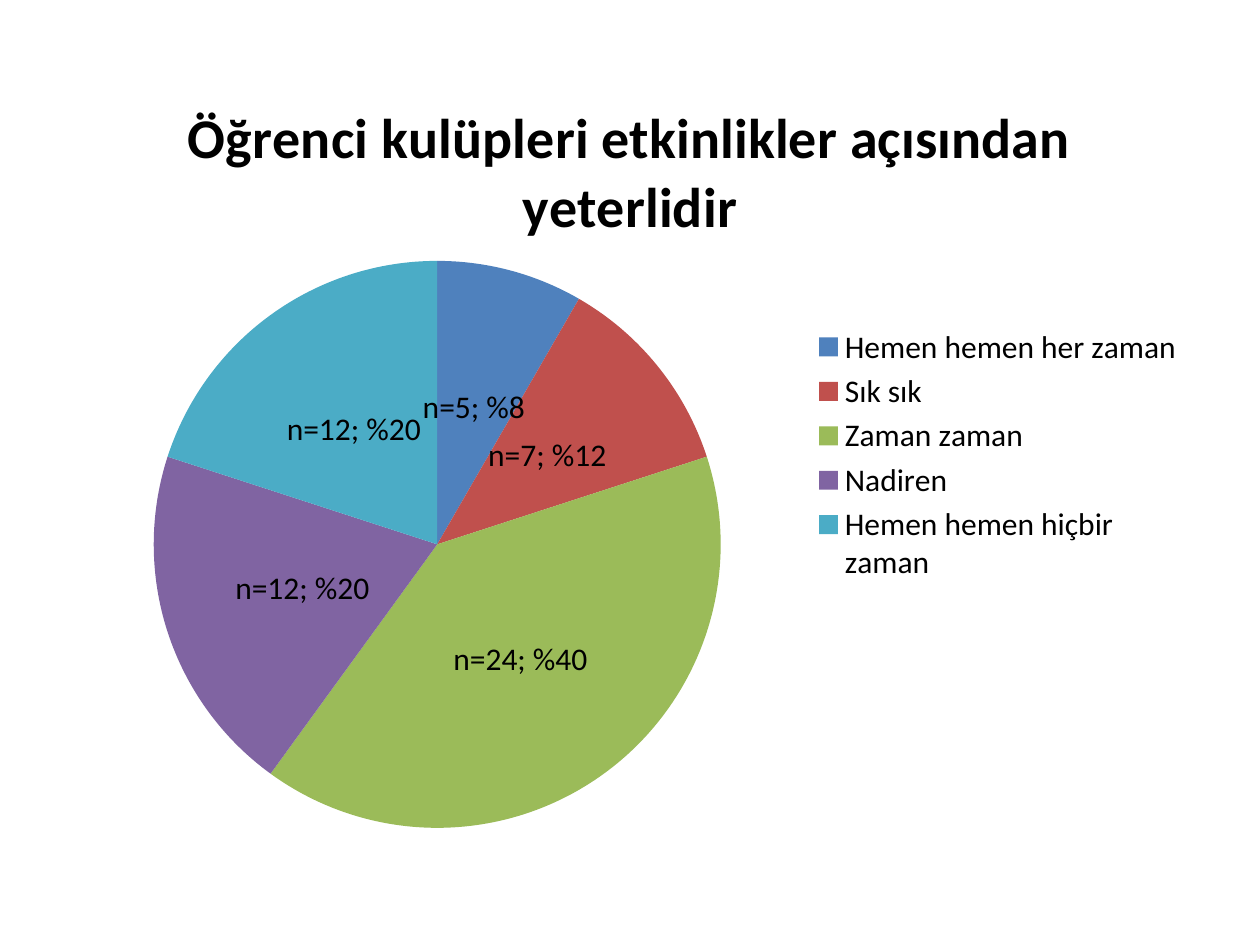
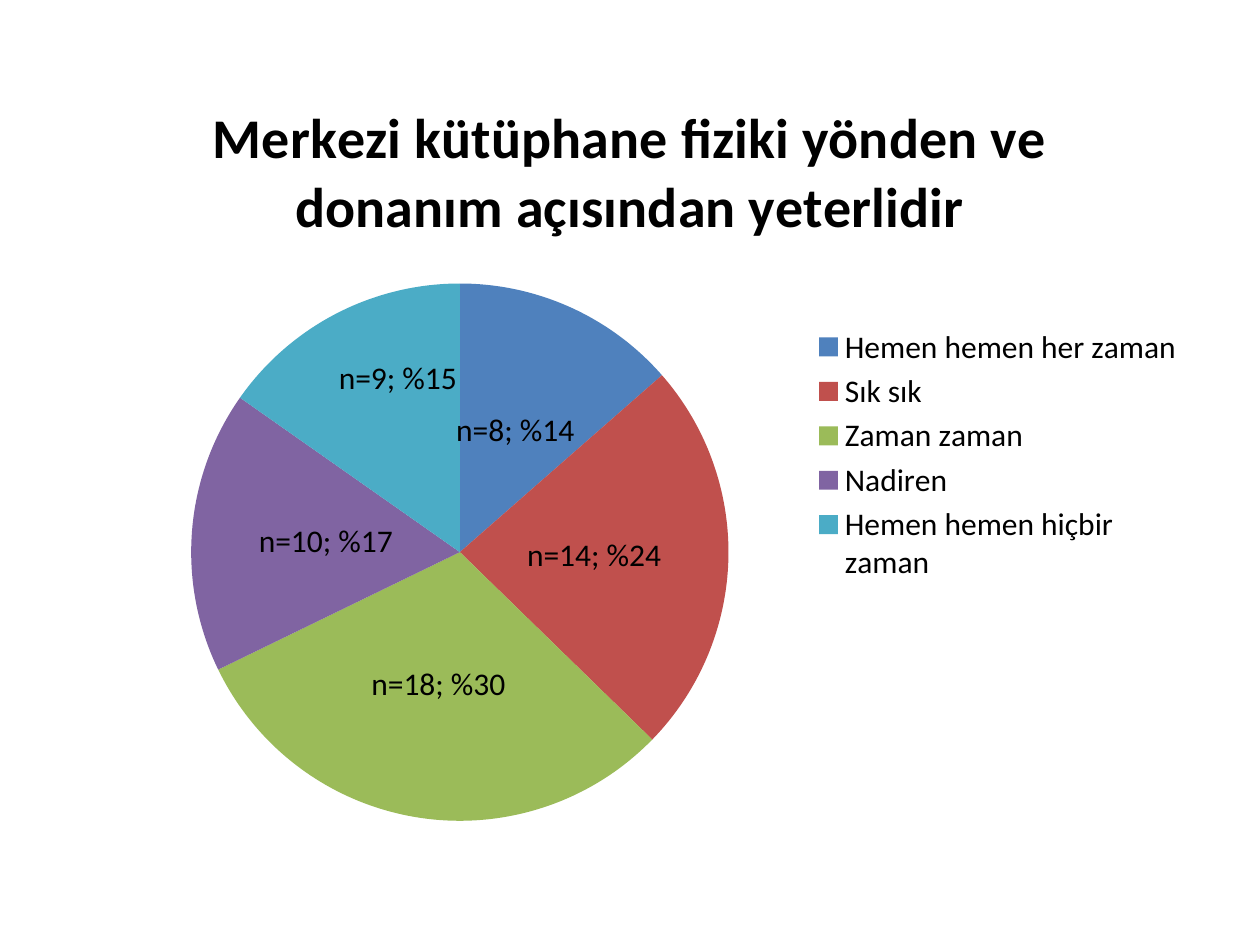
"""Build two survey slides, each a titled pie chart of student answers."""
from lxml import etree
from pptx import Presentation
from pptx import util as u
from pptx.chart import data
from pptx.dml import color
from pptx.enum import chart as charts
from pptx.oxml import ns

COLOURS = {
    "text": "000000",
    "Hemen hemen her zaman": "4F81BD",
    "Sık sık": "C0504D",
    "Zaman zaman": "9BBB59",
    "Nadiren": "8064A2",
    "Hemen hemen hiçbir zaman": "4BACC6",
}
ANSWERS = [name for name in COLOURS if name != "text"]

SURVEY = [
    {
        "question": "Öğrenci kulüpleri etkinlikler açısından yeterlidir",
        "counts": [5, 7, 24, 12, 12],
        "percents": [8, 12, 40, 20, 20],
        "pie_area": {"x": 0.08, "y": 0.25, "w": 0.5, "h": 0.73},
        "label_shifts": {},
    },
    {
        "question": "Merkezi kütüphane fiziki yönden ve donanım açısından yeterlidir",
        "counts": [8, 14, 18, 10, 9],
        "percents": [14, 24, 30, 17, 15],
        "pie_area": {"x": 0.11, "y": 0.28, "w": 0.48, "h": 0.69},
        "label_shifts": {4: {"x": 0, "y": -0.07}},
    },
]


class SurveyDeck:
    """Hold the style, the presentation and the current slide."""

    font_name = "Calibri"
    body_size = u.Pt(18)
    title_size = u.Pt(32)

    def __init__(self):
        self.deck = Presentation()
        self.deck.slide_width = u.Cm(25.4)
        self.deck.slide_height = u.Cm(19.05)
        self.slide = None

    def add_slide(self):
        self.slide = self.deck.slides.add_slide(self.deck.slide_layouts[6])

    def style(self, font, size, bold=False):
        font.name = self.font_name
        font.size = size
        font.bold = bold
        font.color.rgb = color.RGBColor.from_string(COLOURS["text"])

    def place(self, parent, index, lengths, inner=False):
        for old in parent.findall(ns.qn("c:layout")):
            parent.remove(old)
        layout = etree.Element(ns.qn("c:layout"))
        manual = etree.SubElement(layout, ns.qn("c:manualLayout"))
        settings = dict(lengths)
        if inner:
            settings = {"layoutTarget": "inner", "xMode": "edge", "yMode": "edge", **lengths}
        for tag, value in settings.items():
            etree.SubElement(manual, ns.qn(f"c:{tag}")).set("val", str(value))
        parent.insert(index, layout)

    def add_pie(self, question, counts):
        answers = data.CategoryChartData()
        answers.categories = ANSWERS
        answers.add_series(question, counts)
        pie = self.slide.shapes.add_chart(
            charts.XL_CHART_TYPE.PIE, u.Cm(1.27), u.Cm(1.32), u.Cm(22.86), u.Cm(15.7), answers
        ).chart
        self.style(pie.font, self.body_size)
        pie.plots[0].vary_by_categories = True
        return pie

    def add_title(self, pie, question):
        pie.has_title = True
        title = pie.chart_title.text_frame
        title.text = question
        self.style(title.paragraphs[0].runs[0].font, self.title_size, bold=True)

    def add_legend(self, pie):
        pie.has_legend = True
        pie.legend.position = charts.XL_LEGEND_POSITION.RIGHT
        pie.legend.include_in_layout = False
        self.style(pie.legend.font, self.body_size)

    def add_slices(self, pie, counts, percents):
        labels = pie.plots[0].series[0].data_labels
        labels.show_value = True
        labels.show_percentage = True
        labels.position = charts.XL_LABEL_POSITION.CENTER
        self.style(labels.font, self.body_size)
        for index, (answer, count, percent) in enumerate(zip(ANSWERS, counts, percents)):
            point = pie.plots[0].series[0].points[index]
            point.format.fill.solid()
            point.format.fill.fore_color.rgb = color.RGBColor.from_string(COLOURS[answer])
            share = point.data_label.text_frame
            share.text = f"n={count}; %{percent}"
            self.style(share.paragraphs[0].runs[0].font, self.body_size)
            point.data_label.position = charts.XL_LABEL_POSITION.CENTER

    def add_question(self, question, counts, percents, pie_area, label_shifts):
        self.add_slide()
        pie = self.add_pie(question, counts)
        self.add_title(pie, question)
        self.add_legend(pie)
        self.add_slices(pie, counts, percents)
        self.place(pie.element.xpath(".//c:plotArea")[0], 0, pie_area, inner=True)
        for index, shift in label_shifts.items():
            self.place(pie.element.xpath(f".//c:dLbl[c:idx/@val='{index}']")[0], 1, shift)


def main():
    survey = SurveyDeck()
    for entry in SURVEY:
        survey.add_question(**entry)
    survey.deck.save("out.pptx")


if __name__ == "__main__":
    main()
